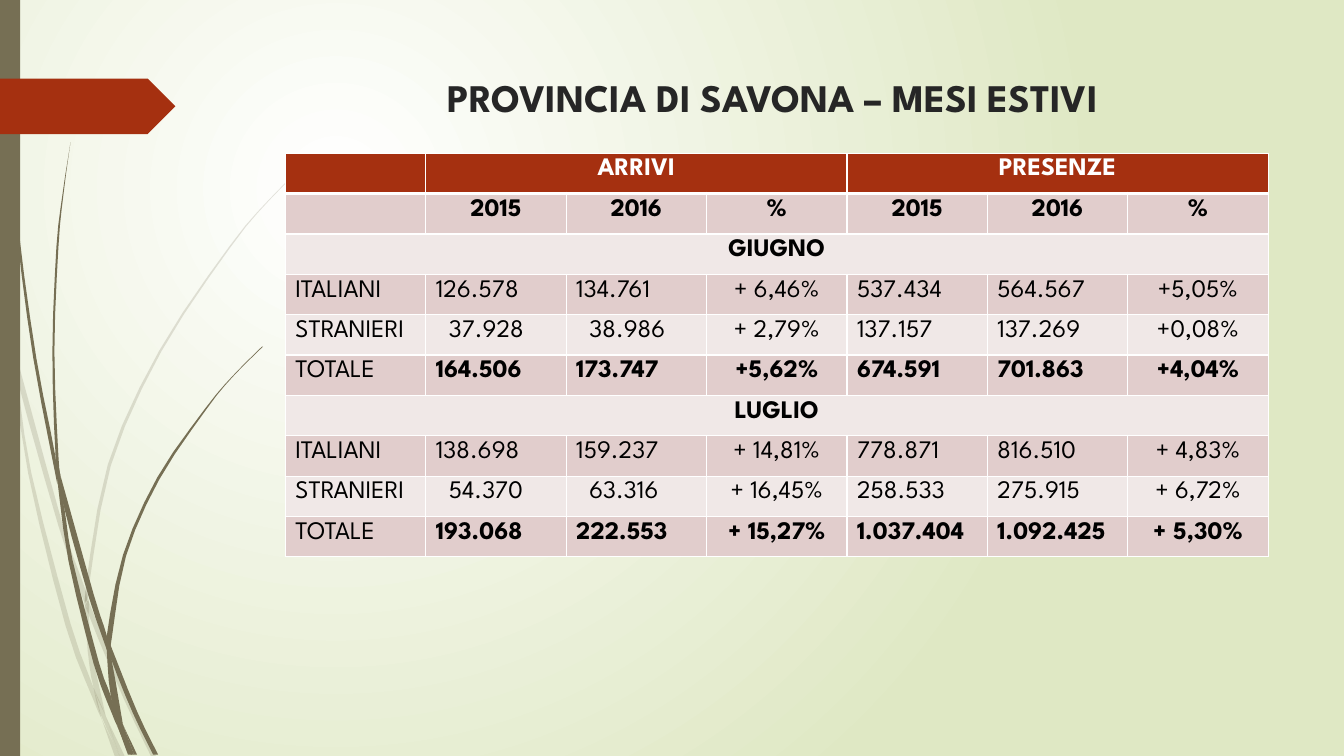
import lxml.etree
import pptx
import pptx.dml.color
import pptx.enum.shapes
import pptx.enum.text
import pptx.oxml
import pptx.oxml.ns
import pptx.util

COLORS = {"olive": "766F54", "rust": "A53010", "white": "FFFFFF", "green": "DFE8C4",
          "title": "262626", "black": "000000", "band": "E1CDCC", "pale": "F0E8E7"}
FONT = "League Spartan"
W, H = 13.33, 7.5
CENTER = pptx.enum.text.PP_ALIGN.CENTER
LEFT = pptx.enum.text.PP_ALIGN.LEFT

HEADER = ["", "ARRIVI", "", "", "PRESENZE", "", ""]
YEARS = ["", "2015", "2016", "%", "2015", "2016", "%"]
MONTHS = {
    "GIUGNO": [
        ["ITALIANI", "126.578", "134.761", "+ 6,46%", "537.434", "564.567", "+5,05%"],
        ["STRANIERI", "37.928", "38.986", "+ 2,79%", "137.157", "137.269", "+0,08%"],
        ["TOTALE", "164.506", "173.747", "+5,62%", "674.591", "701.863", "+4,04%"]],
    "LUGLIO": [
        ["ITALIANI", "138.698", "159.237", "+ 14,81%", "778.871", "816.510", "+ 4,83%"],
        ["STRANIERI", "54.370", "63.316", "+ 16,45%", "258.533", "275.915", "+ 6,72%"],
        ["TOTALE", "193.068", "222.553", "+ 15,27%", "1.037.404", "1.092.425", "+ 5,30%"]],
}

# Pieces of grass, in hundredths of an inch: left edge and right edge, both downwards.
FAINT_GRASS = [
    ([(0, 282), (0, 299), (10, 344), (11, 350)], [(0, 282), (9, 322), (11, 350)]),
    ([(14, 345), (17, 376), (58, 522), (84, 599)], [(14, 345), (62, 520), (85, 586), (84, 599)]),
    ([(88, 596), (88, 610), (123, 694), (150, 751)], [(88, 596), (92, 607), (127, 692), (155, 751)]),
    ([(105, 711), (119, 751)], [(105, 711), (124, 751)]),
    ([(11, 350), (28, 470), (65, 621), (92, 693), (101, 714)],
     [(11, 350), (17, 376), (31, 469), (70, 619), (93, 683), (101, 714)]),
    ([(84, 599), (87, 646), (93, 683), (105, 711)], [(84, 599), (88, 610), (91, 646), (105, 711)]),
    ([(312, 153), (268, 197), (228, 244), (158, 348), (107, 461), (85, 584), (88, 596)],
     [(312, 154), (268, 198), (229, 245), (160, 349), (110, 462), (88, 584), (88, 596)]),
    ([(101, 714), (114, 751)], [(101, 714), (119, 751)]),
    ([(85, 586), (84, 599), (88, 610)], [(85, 586), (88, 596), (88, 610)]),
    ([(93, 683), (99, 707), (119, 751)], [(93, 683), (105, 711), (119, 751)]),
]
DARK_GRASS = [
    ([(3, 0), (7, 110), (17, 233), (33, 355), (57, 481)],
     [(4, 0), (8, 109), (19, 232), (36, 355), (55, 453), (57, 481)]),
    ([(60, 472), (64, 505), (88, 592), (106, 645)], [(60, 472), (93, 590), (106, 631), (106, 645)]),
    ([(110, 641), (111, 656), (132, 708), (152, 749)], [(110, 641), (136, 706), (157, 749)]),
    ([(57, 477), (68, 557), (93, 659), (111, 708), (117, 722)],
     [(57, 477), (64, 505), (72, 556), (98, 657), (110, 691), (117, 722)]),
    ([(70, 141), (62, 193), (56, 245), (52, 349), (55, 449), (60, 472)],
     [(70, 141), (63, 193), (58, 245), (54, 349), (58, 453), (60, 472)]),
    ([(122, 719), (133, 749)], [(122, 719), (136, 749)]),
    ([(55, 449), (57, 477), (64, 505)], [(55, 449), (60, 472), (64, 505)]),
    ([(260, 344), (231, 373), (204, 405), (156, 474), (122, 551), (106, 631), (110, 641)],
     [(261, 344), (231, 374), (205, 406), (158, 476), (125, 552), (111, 633), (110, 641)]),
    ([(117, 722), (127, 749)], [(117, 722), (131, 749)]),
    ([(106, 645), (110, 691), (122, 719)], [(106, 645), (111, 656), (122, 719)]),
    ([(106, 631), (106, 645), (111, 656)], [(106, 631), (110, 641), (111, 656)]),
    ([(110, 691), (117, 722), (130, 749)], [(110, 691), (122, 719), (133, 749)]),
]


def rgb(name):
    return pptx.dml.color.RGBColor.from_string(COLORS[name])


def inches(*values):
    return [pptx.util.Inches(v) for v in values]


def paint(sp, color):
    sp.shadow.inherit = False
    sp.fill.solid()
    sp.fill.fore_color.rgb = rgb(color)
    sp.line.fill.background()


def write(tf, text, size, color, bold, align):
    p = tf.paragraphs[0]
    p.text = text
    p.alignment = align
    for r in p.runs:
        r.font.name = FONT
        r.font.size = pptx.util.Pt(size)
        r.font.bold = bold
        r.font.color.rgb = rgb(color)


def smooth_curve(points, steps=3):
    """Sample a Catmull-Rom curve through the points."""
    padded = [points[0], *points, points[-1]]
    curve = []
    for a, b, c, d in zip(padded, padded[1:], padded[2:], padded[3:]):
        for t in (i / steps for i in range(steps)):
            curve.append(tuple(
                q + .5 * t * (r - p + t * (2 * p - 5 * q + 4 * r - s + t * (3 * (q - r) + s - p)))
                for p, q, r, s in zip(a, b, c, d)))
    return curve + [points[-1]]


def add_background(s):
    """Radial gradient with its centre a quarter of the way in."""
    fill = s.background.fill
    fill.gradient()
    for stop, color in zip(fill.gradient_stops, ("white", "green")):
        stop.color.rgb = rgb(color)
    lin = next(s.background._cSld.iter(pptx.oxml.ns.qn("a:lin")))
    lin.getparent().replace(lin, pptx.oxml.parse_xml(
        f'<a:path {pptx.oxml.ns.nsdecls("a")} path="circle">'
        '<a:fillToRect l="50000" t="50000" r="100000" b="100000"/></a:path>'))


def add_grass(s, left_edge, right_edge, opacity):
    outline = [(10 * x, 10 * y) for x, y in smooth_curve(left_edge) + smooth_curve(right_edge)[::-1]]
    builder = s.shapes.build_freeform(*outline[0], scale=pptx.util.Inches(.001))
    builder.add_line_segments(outline[1:], close=True)
    sp = builder.convert_to_shape()
    paint(sp, "olive")
    if opacity < 100:
        color = next(sp._element.spPr.iter(pptx.oxml.ns.qn("a:srgbClr")))
        lxml.etree.SubElement(color, pptx.oxml.ns.qn("a:alpha"), val=str(opacity * 1000))


def add_side_decoration(s):
    for pieces, opacity in ((FAINT_GRASS, 20), (DARK_GRASS, 100)):
        for left_edge, right_edge in pieces:
            add_grass(s, left_edge, right_edge, opacity)
    shapes = pptx.enum.shapes.MSO_SHAPE
    paint(s.shapes.add_shape(shapes.RECTANGLE, *inches(0, 0, .2, H)), "olive")
    paint(s.shapes.add_shape(shapes.PENTAGON, *inches(0, .78, 1.74, .55)), "rust")


def add_title(s, box, text):
    tf = s.shapes.add_textbox(*inches(*box)).text_frame
    tf.word_wrap = True
    write(tf, text, 27.9, "title", True, CENTER)


def style_cell(cell, fill, bottom):
    tc_pr = cell._tc.get_or_add_tcPr()
    for side in "LRTB":
        width = pptx.util.Pt(bottom if side == "B" else 1)
        tc_pr.append(pptx.oxml.parse_xml(
            f'<a:ln{side} {pptx.oxml.ns.nsdecls("a")} w="{width}"><a:solidFill>'
            f'<a:srgbClr val="{COLORS["white"]}"/></a:solidFill></a:ln{side}>'))
    cell.fill.solid()
    cell.fill.fore_color.rgb = rgb(fill)


def fill_cell(cell, text, row, col, is_heading, is_total):
    centered = is_heading or col in (3, 6)
    bold = is_heading or (is_total and col > 0)
    write(cell.text_frame, text, 18, "black" if row else "white", bold, CENTER if centered else LEFT)
    # A small paragraph end keeps the cell from stretching its row.
    p = cell.text_frame.paragraphs[0]._p
    lxml.etree.SubElement(p, pptx.oxml.ns.qn("a:endParaRPr"), sz="1000")
    if not centered and col > 0 and len(text) < len("000.000"):
        cell.margin_left = pptx.util.Inches(.23)


def add_table(s, box, header_height=.33):
    rows = [HEADER, YEARS]
    for month, lines in MONTHS.items():
        rows += [[month] + [""] * 6, *lines]
    table = s.shapes.add_table(len(rows), len(HEADER), *inches(*box)).table
    for column in table.columns:
        column.width = pptx.util.Inches(box[2] / len(HEADER))
    for i, values in enumerate(rows):
        row_height = (box[3] - header_height) / (len(rows) - 1) if i else header_height
        table.rows[i].height = pptx.util.Inches(row_height)
        is_month = values[0] in MONTHS
        fill = "rust" if i == 0 else ("band" if i % 2 else "pale")
        for j, text in enumerate(values):
            style_cell(table.cell(i, j), fill, bottom=1 if i else 3)
            fill_cell(table.cell(i, j), text, i, j, i < 2 or is_month, values[0] == "TOTALE")
        if is_month:
            table.cell(i, 0).merge(table.cell(i, 6))
    for first in (1, 4):
        table.cell(0, first).merge(table.cell(0, first + 2))


def main():
    prs = pptx.Presentation()
    prs.slide_width, prs.slide_height = inches(W, H)
    s = prs.slides.add_slide(prs.slide_layouts[6])
    add_background(s)
    add_side_decoration(s)
    add_title(s, (2.79, .68, 9.75, .84), "PROVINCIA DI SAVONA – MESI ESTIVI")
    add_table(s, (2.83, 1.52, 9.75, 3.82))
    prs.save("out.pptx")


if __name__ == "__main__":
    main()
